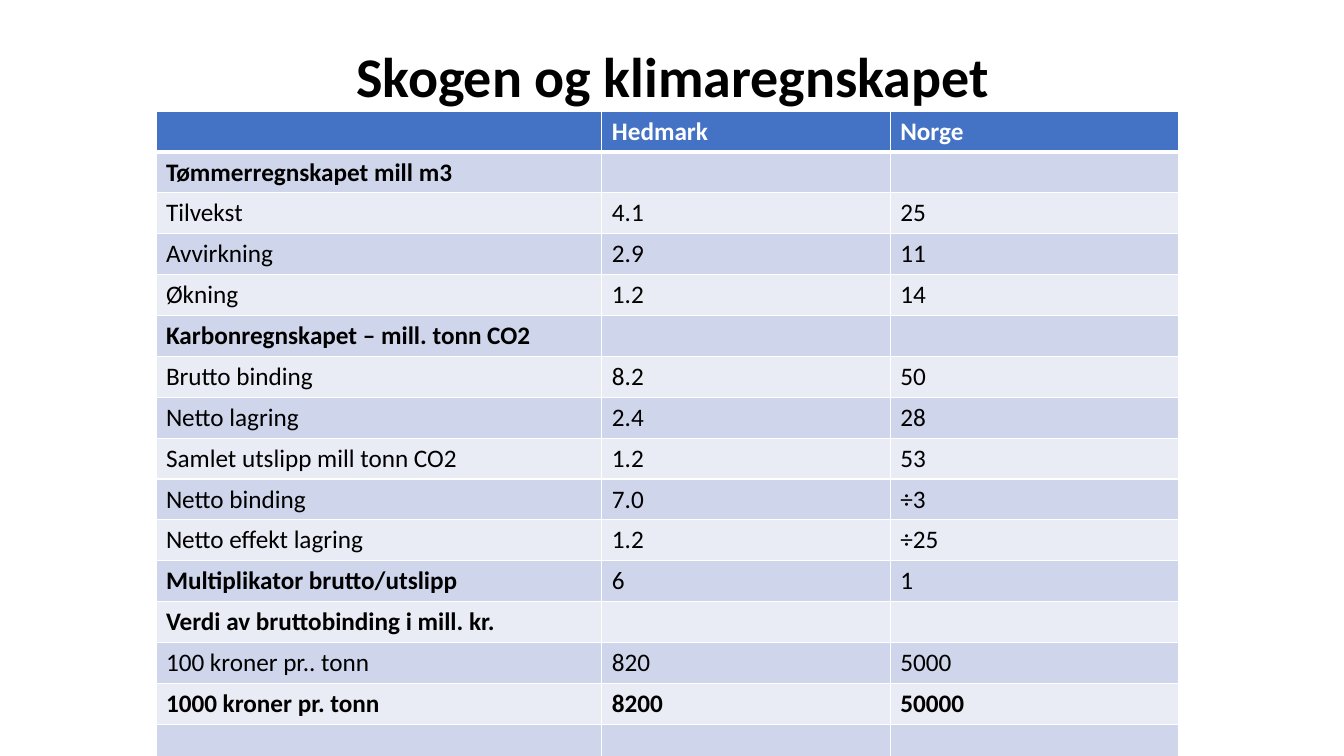
import pptx
import pptx.dml.color
import pptx.enum.text
import pptx.oxml
import pptx.oxml.ns
import pptx.util

WIDTH, HEIGHT = pptx.util.Inches(13.33), pptx.util.Inches(7.5)
TITLE_ONLY = 5
FONT = "Calibri"
COLORS = {
    "header": "4472C4",
    "dark_band": "CFD5EA",
    "light_band": "E9EBF5",
    "white": "FFFFFF",
    "black": "000000",
}
COLUMN_SHARES = (0.436, 0.282, 0.282)
ROW_HEIGHT = pptx.util.Inches(0.38)
ROWS = [
    ("", "Hedmark", "Norge"),
    ("Tømmerregnskapet mill m3", "", ""),
    ("Tilvekst", "4.1", "25"),
    ("Avvirkning", "2.9", "11"),
    ("Økning", "1.2", "14"),
    ("Karbonregnskapet – mill. tonn CO2", "", ""),
    ("Brutto binding", "8.2", "50"),
    ("Netto lagring", "2.4", "28"),
    ("Samlet utslipp mill tonn CO2", "1.2", "53"),
    ("Netto binding", "7.0", "÷3"),
    ("Netto effekt lagring", "1.2", "÷25"),
    ("Multiplikator brutto/utslipp", "6", "1"),
    ("Verdi av bruttobinding i mill. kr.", "", ""),
    ("100 kroner pr.. tonn", "820", "5000"),
    ("1000 kroner pr. tonn", "8200", "50000"),
    ("", "", ""),
]
BOLD_ROWS = {0, 14}
BOLD_LABELS = {1, 5, 11, 12}


def share_box(left, top, width, height):
    return (int(left * WIDTH), int(top * HEIGHT), int(width * WIDTH), int(height * HEIGHT))


def color(name):
    return pptx.dml.color.RGBColor.from_string(COLORS[name])


def style_font(font, size, color_name, bold):
    font.name = FONT
    font.size = pptx.util.Pt(size)
    font.bold = bold
    font.color.rgb = color(color_name)


def add_title(page, box, text):
    title = page.shapes.title
    title.left, title.top, title.width, title.height = box
    frame = title.text_frame
    frame.text = text
    frame.vertical_anchor = pptx.enum.text.MSO_ANCHOR.MIDDLE
    para = frame.paragraphs[0]
    para.alignment = pptx.enum.text.PP_ALIGN.CENTER
    para.line_spacing = 0.9
    style_font(para.font, 40, "black", True)


def add_borders(cell, top, bottom):
    properties = cell._tc.get_or_add_tcPr()
    for side, points in (("L", 1), ("R", 1), ("T", top), ("B", bottom)):
        properties.append(pptx.oxml.parse_xml(
            f'<a:ln{side} {pptx.oxml.ns.nsdecls("a")} w="{pptx.util.Pt(points)}">'
            f'<a:solidFill><a:srgbClr val="{COLORS["white"]}"/></a:solidFill>'
            f'</a:ln{side}>'))


def fill_cell(cell, row, column, text):
    header = row == 0
    band = "header" if header else "dark_band" if row % 2 else "light_band"
    add_borders(cell, 3 if row == 1 else 1, 3 if header else 1)
    cell.fill.solid()
    cell.fill.fore_color.rgb = color(band)
    cell.text = text
    bold = row in BOLD_ROWS or (column == 0 and row in BOLD_LABELS)
    style_font(cell.text_frame.paragraphs[0].font, 18, "white" if header else "black", bold)


def add_accounts_table(page, box):
    left, top, width, height = box
    table = page.shapes.add_table(len(ROWS), len(COLUMN_SHARES), left, top, width, height).table
    for column, share in zip(table.columns, COLUMN_SHARES):
        column.width = int(share * width)
    for row, texts in enumerate(ROWS):
        table.rows[row].height = ROW_HEIGHT
        for column, text in enumerate(texts):
            fill_cell(table.cell(row, column), row, column, text)


def main():
    deck = pptx.Presentation()
    deck.slide_width, deck.slide_height = WIDTH, HEIGHT
    page = deck.slides.add_slide(deck.slide_layouts[TITLE_ONLY])
    add_title(page, share_box(0.069, 0.053, 0.863, 0.105), "Skogen og klimaregnskapet")
    add_accounts_table(page, share_box(0.116, 0.147, 0.761, 0.853))
    deck.save("out.pptx")


if __name__ == "__main__":
    main()
